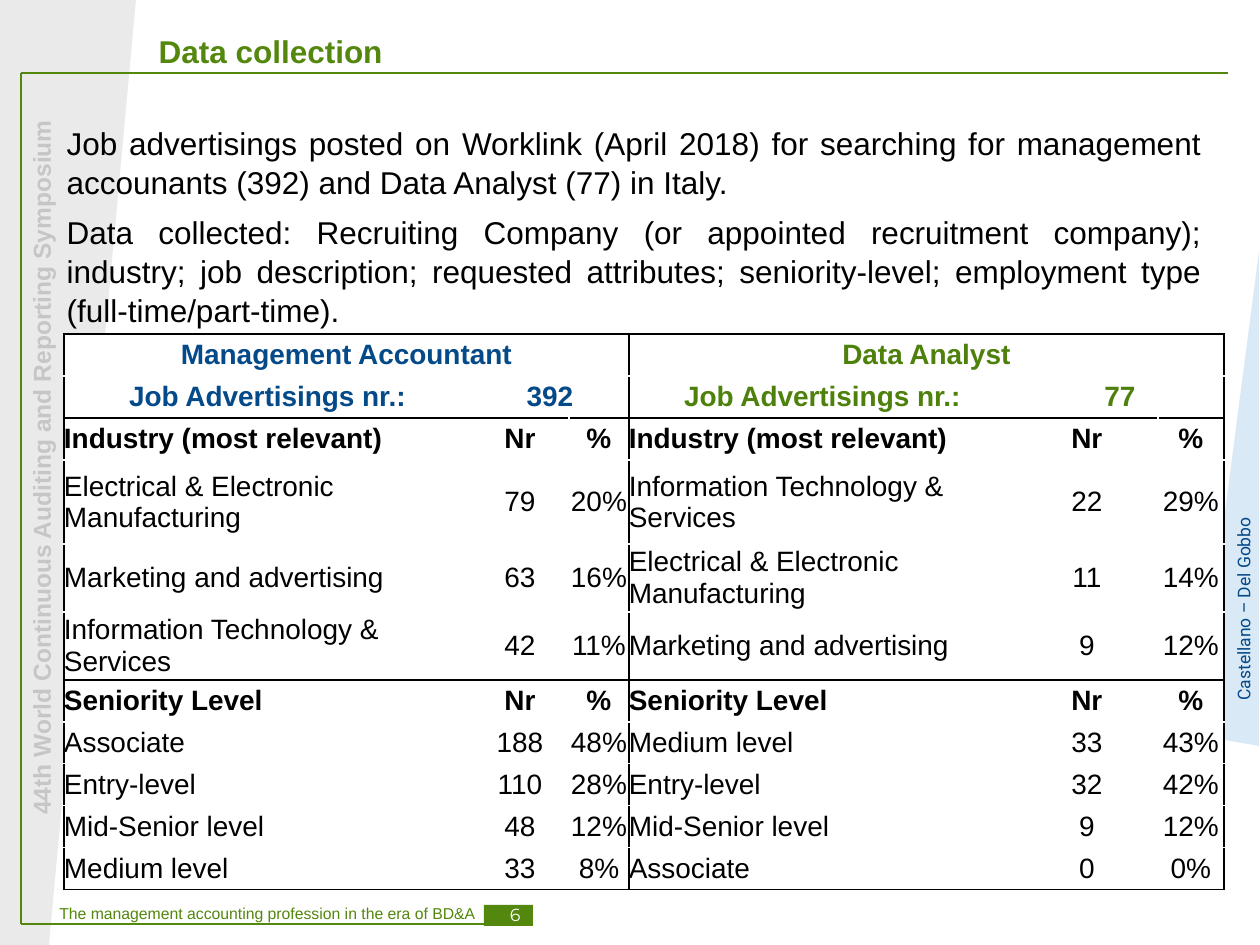
from lxml import etree
from pptx import Presentation, util as u
from pptx.dml.color import RGBColor
from pptx.enum import shapes, text
from pptx.oxml import ns

PX = 914400 // 126
A = text.PP_ALIGN

THEME = {
    "green": "53870D", "leaf": "4E800C", "blue": "044988", "sky": "B5D5ED",
    "grey": "EAEAEA", "silver": "C6C6C6", "black": "000000", "white": "FFFFFF",
    "sans": "Arial", "number": "Montserrat", "author": "Roboto",
    "heading": 18, "cell": 16, "side": 14, "small": 10, "footer": 9, "rule": 0.75,
}

TITLE = "Data collection"
BODY = [
    "Job advertisings posted on Worklink (April 2018) for searching for management "
    "accounants (392) and Data Analyst (77) in Italy.",
    "Data collected: Recruiting Company (or appointed recruitment company); industry; "
    "job description; requested attributes; seniority-level; employment type "
    "(full-time/part-time).",
]
ROWS = [
    ("Management Accountant", "", "", "Data Analyst", "", ""),
    ("Job Advertisings nr.:", "392", "", "Job Advertisings nr.:", "77", ""),
    ("Industry (most relevant)", "Nr", "%") * 2,
    ("Electrical & Electronic Manufacturing", "79", "20%",
     "Information Technology & Services", "22", "29%"),
    ("Marketing and advertising", "63", "16%",
     "Electrical & Electronic Manufacturing", "11", "14%"),
    ("Information Technology & Services", "42", "11%",
     "Marketing and advertising", "9", "12%"),
    ("Seniority Level", "Nr", "%") * 2,
    ("Associate", "188", "48%", "Medium level", "33", "43%"),
    ("Entry-level", "110", "28%", "Entry-level", "32", "42%"),
    ("Mid-Senior level", "48", "12%", "Mid-Senior level", "9", "12%"),
    ("Medium level", "33", "8%", "Associate", "0", "0%"),
]
COLS = [407, 98, 60, 387, 142, 66]
HEIGHTS = [42, 42, 42, 84, 68, 68] + [42] * 5
MERGES = [(0, 0, 2), (0, 3, 5), (1, 1, 2), (1, 4, 5)]
BOLD_ROWS = (0, 1, 2, 6)
SECTION_TOPS = (0, 2, 6)
SECTION_ENDS = (1, 5, 10)

PANELS = [
    ([(1196, 735), (1259, 746), (1259, 252)], "sky", 50),
    ([(49, 945), (136, 0), (0, 0), (0, 945)], "grey", 100),
]
RULES = [(21, 924, 21, 73), (21, 73, 1228, 73), (21, 924, 507, 924)]
LABELS = [
    ("The management accounting profession in the era of BD&A", (47, 897, 445, 32), 0,
     A.LEFT, {"size": "footer", "color": "green"}),
    ("6", (481, 898, 52, 34), 0, A.RIGHT,
     {"size": "small", "color": "white", "name": "number"}),
    ("44th World Continuous Auditing and Reporting Symposium", (-320, 446, 722, 43), 270,
     A.CENTER, {"size": "side", "color": "silver", "bold": True}),
    ("Castellano – Del Gobbo", (1139, 592, 209, 34), 270, A.CENTER,
     {"size": "small", "color": "blue", "name": "author"}),
]


def rgb(key):
    return RGBColor.from_string(THEME[key])


def put(sp, box):
    for name, v in zip(("left", "top", "width", "height"), box):
        setattr(sp, name, v * PX)


def paint(sp, color):
    sp.shadow.inherit = False
    sp.fill.solid()
    sp.fill.fore_color.rgb = rgb(color)
    sp.line.fill.background()


def write(p, words, align, size, color, name="sans", bold=False):
    p.alignment = align
    r = p.add_run()
    r.text = words
    for k, v in {"size": u.Pt(THEME[size]), "name": THEME[name], "bold": bold}.items():
        setattr(r.font, k, v)
    r.font.color.rgb = rgb(color)


def frame(tf, wrap, anchor):
    for k, v in {"word_wrap": wrap, "vertical_anchor": anchor,
                 "auto_size": text.MSO_AUTO_SIZE.SHAPE_TO_FIT_TEXT}.items():
        setattr(tf, k, v)


def add_panel(s, pts, color, alpha):
    fb = s.shapes.build_freeform(*pts[0], scale=PX)
    fb.add_line_segments(pts[1:], close=True)
    sp = fb.convert_to_shape()
    paint(sp, color)
    if alpha < 100:
        clr = next(sp.element.spPr.iter(ns.qn("a:srgbClr")))
        etree.SubElement(clr, ns.qn("a:alpha")).set("val", str(alpha * 1000))


def add_rule(s, ends):
    c = s.shapes.add_connector(shapes.MSO_CONNECTOR.STRAIGHT, *(v * PX for v in ends))
    c.line.color.rgb = rgb("green")
    c.line.width = u.Pt(THEME["rule"])
    etree.SubElement(c.element.spPr, ns.qn("a:effectLst"))


def add_label(s, words, box, turn, align, style):
    sp = s.shapes.add_textbox(0, 0, 0, 0)
    put(sp, box)
    sp.rotation = turn
    frame(sp.text_frame, False, text.MSO_ANCHOR.MIDDLE)
    write(sp.text_frame.paragraphs[0], words, align, **style)


def set_borders(cell, r, c):
    last = c + cell.span_width - 1 if cell.is_merge_origin else c
    dark = {"L": c in (0, 3), "R": last in (2, 5),
            "T": r in SECTION_TOPS, "B": r in SECTION_ENDS}
    pr = cell._tc.get_or_add_tcPr()
    for i, (side, on) in enumerate(dark.items()):
        ln = etree.Element(ns.qn("a:ln" + side), w=str(u.Pt(1)))
        fill = etree.SubElement(ln, ns.qn("a:solidFill"))
        etree.SubElement(fill, ns.qn("a:srgbClr"), val=THEME["black" if on else "white"])
        pr.insert(i, ln)


def add_jobs_table(s):
    box = (64, 334, sum(COLS), sum(HEIGHTS))
    t = s.shapes.add_table(len(ROWS), len(COLS), *(v * PX for v in box)).table
    for col, w in zip(t.columns, COLS):
        col.width = w * PX
    for row, h in zip(t.rows, HEIGHTS):
        row.height = h * PX
    for r, first, last in MERGES:
        t.cell(r, first).merge(t.cell(r, last))
    for r, row in enumerate(ROWS):
        for c, words in enumerate(row):
            cell = t.cell(r, c)
            for side in ("left", "top", "right", "bottom"):
                setattr(cell, "margin_" + side, 0)
            cell.vertical_anchor = text.MSO_ANCHOR.MIDDLE
            cell.fill.solid()
            cell.fill.fore_color.rgb = rgb("white")
            set_borders(cell, r, c)
            if words:
                color = ("blue" if c < 3 else "leaf") if r < 2 else "black"
                align = A.LEFT if r > 1 and c in (0, 3) else A.CENTER
                write(cell.text_frame.paragraphs[0], words, align, "cell", color,
                      bold=r in BOLD_ROWS)


def main():
    prs = Presentation()
    prs.slide_width, prs.slide_height = u.Inches(10), u.Inches(7.5)
    s = prs.slides.add_slide(prs.slide_layouts[1])
    title, body = s.placeholders
    for panel in PANELS:
        add_panel(s, *panel)
    for ends in RULES:
        add_rule(s, ends)
    tag = s.shapes.add_shape(shapes.MSO_SHAPE.RECTANGLE, 0, 0, 0, 0)
    put(tag, (484, 905, 49, 21))
    paint(tag, "green")
    for label in LABELS:
        add_label(s, *label)

    for sp, box in ((title, (146, 26, 261, 50)), (body, (54, 116, 1160, 214))):
        sp.element.getparent().append(sp.element)
        put(sp, box)
    frame(title.text_frame, False, text.MSO_ANCHOR.MIDDLE)
    write(title.text_frame.paragraphs[0], TITLE, A.LEFT, "heading", "green", bold=True)
    tf = body.text_frame
    frame(tf, True, text.MSO_ANCHOR.TOP)
    for i, words in enumerate(BODY):
        p = tf.add_paragraph() if i else tf.paragraphs[0]
        pPr = p._p.get_or_add_pPr()
        pPr.set("marL", "0")
        pPr.set("indent", "0")
        etree.SubElement(pPr, ns.qn("a:buNone"))
        p.space_before = u.Pt(6 * i)
        p.line_spacing = 1.04
        write(p, words, A.JUSTIFY, "heading", "black")

    add_jobs_table(s)
    prs.save("out.pptx")


if __name__ == "__main__":
    main()
